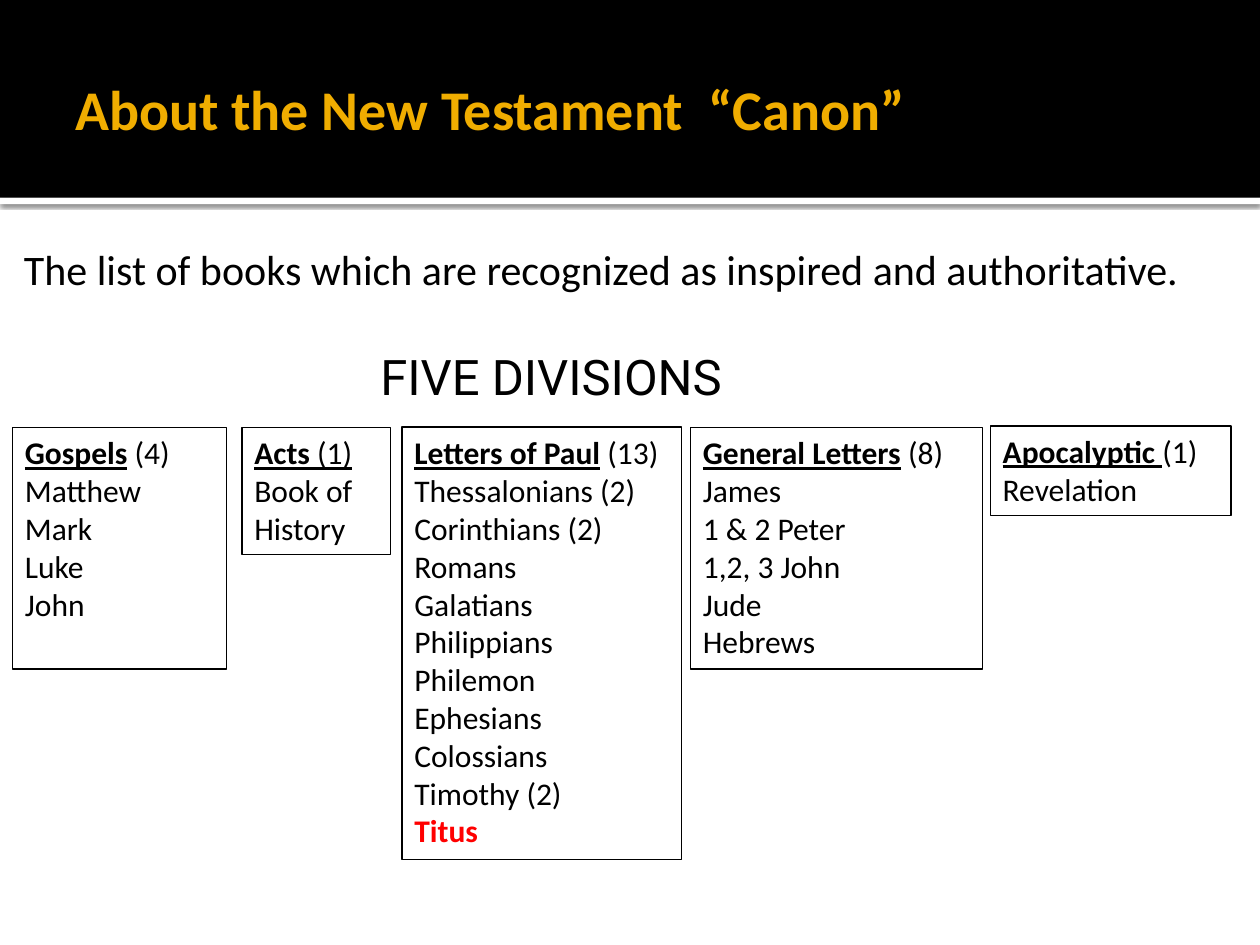
from lxml.etree import SubElement
from pptx import Presentation
from pptx.dml.color import RGBColor
from pptx.enum.shapes import MSO_SHAPE as SHAPE
from pptx.enum.text import MSO_ANCHOR as ANCHOR, MSO_AUTO_SIZE as FIT, PP_ALIGN as ALIGN
from pptx.oxml.ns import qn
from pptx.util import Inches, Pt

BLACK = RGBColor(0, 0, 0)
WHITE = RGBColor(255, 255, 255)
GOLD = RGBColor(0xF0, 0xAD, 0x00)
RED = RGBColor(255, 0, 0)

COLS, ROWS = 100, 75
CELL = Inches(0.1)

BODY = dict(name="Calibri", size=Pt(18), bold=False, underline=False)
HEAD = dict(BODY, bold=True, underline=True)
COUNT = dict(BODY, underline=True)
FOCUS = dict(BODY, bold=True)

DIVISIONS = [
    ((1, 33.9, 17, 19.2), [("Gospels", HEAD), (" (4)", BODY)],
     ["Matthew", "Mark", "Luke", "John"]),
    ((19.2, 33.9, 11.8, 10.1), [("Acts ", HEAD), ("(1)", COUNT)],
     ["Book of History"]),
    ((31.9, 33.9, 22.2, 34.3), [("Letters of Paul", HEAD), (" (13)", BODY)],
     ["Thessalonians (2)", "Corinthians (2)", "Romans", "Galatians", "Philippians",
      "Philemon", "Ephesians", "Colossians", "Timothy (2)", "Titus"]),
    ((54.8, 33.9, 23.2, 19.2), [("General Letters", HEAD), (" (8)", BODY)],
     ["James", "1 & 2 Peter", "1,2, 3 John", "Jude", "Hebrews"]),
    ((78.6, 33.8, 19.1, 7.1), [("Apocalyptic ", HEAD), ("(1)", BODY)],
     ["Revelation"]),
]


def grid(*cells):
    return [round(n * CELL) for n in cells]


def apply(target, values):
    for name, value in values.items():
        setattr(target, name, value)


def add_run(p, text, fmt, color=BLACK):
    r = p.add_run()
    r.text = text
    apply(r.font, fmt)
    r.font.color.rgb = color


def add_band(slide, box, color):
    sp = slide.shapes.add_shape(SHAPE.RECTANGLE, *grid(*box))
    sp.shadow.inherit = False
    sp.fill.solid()
    sp.fill.fore_color.rgb = color
    sp.line.fill.background()
    return sp


def add_shadow(sp):
    effects = sp._element.spPr.find(qn("a:effectLst"))
    shadow = SubElement(effects, qn("a:outerShdw"), blurRad=str(Pt(2.5)),
                        dist=str(Pt(0.8)), dir="5400000", rotWithShape="0")
    color = SubElement(shadow, qn("a:srgbClr"), val=str(BLACK))
    SubElement(color, qn("a:alpha"), val="60000")


def add_text(slide, box, text, fmt, color=BLACK, **frame):
    tf = slide.shapes.add_textbox(*grid(*box)).text_frame
    apply(tf, dict(word_wrap=True) | frame)
    add_run(tf.paragraphs[0], text, fmt, color)


def add_division(slide, box, heading, books):
    sp = slide.shapes.add_shape(SHAPE.RECTANGLE, *grid(*box))
    sp.shadow.inherit = False
    sp.fill.background()
    sp.line.color.rgb = BLACK
    sp.line.width = Pt(0.75)
    tf = sp.text_frame
    apply(tf, dict(word_wrap=True, vertical_anchor=ANCHOR.TOP,
                   auto_size=FIT.SHAPE_TO_FIT_TEXT))
    p = tf.paragraphs[0]
    p.alignment = ALIGN.LEFT
    for text, fmt in heading:
        add_run(p, text, fmt)
    for book in books:
        p = tf.add_paragraph()
        p.alignment = ALIGN.LEFT
        fmt, color = (FOCUS, RED) if book == "Titus" else (BODY, BLACK)
        add_run(p, book, fmt, color)


def main():
    prs = Presentation()
    prs.slide_width, prs.slide_height = grid(COLS, ROWS)
    slide = prs.slides.add_slide(prs.slide_layouts[6])
    add_shadow(add_band(slide, (0, 15.7, COLS, 0.5), WHITE))
    add_band(slide, (0, 0, COLS, 15.7), BLACK)
    add_text(slide, (5, 1.7, 90, 13.7), "About the New Testament  “Canon”",
             dict(FOCUS, size=Pt(32)), GOLD, vertical_anchor=ANCHOR.MIDDLE)
    add_text(slide, (0, 18.3, COLS, 55.8),
             "The list of books which are recognized as inspired and authoritative.",
             dict(BODY, size=Pt(24)), margin_left=Inches(0.19), margin_top=Inches(0.1))
    for division in DIVISIONS:
        add_division(slide, *division)
    add_text(slide, (29.2, 27, 30.9, 5.7), "FIVE DIVISIONS",
             dict(BODY, name="Roboto", size=Pt(28)),
             word_wrap=False, auto_size=FIT.SHAPE_TO_FIT_TEXT)
    prs.save("out.pptx")


if __name__ == "__main__":
    main()
